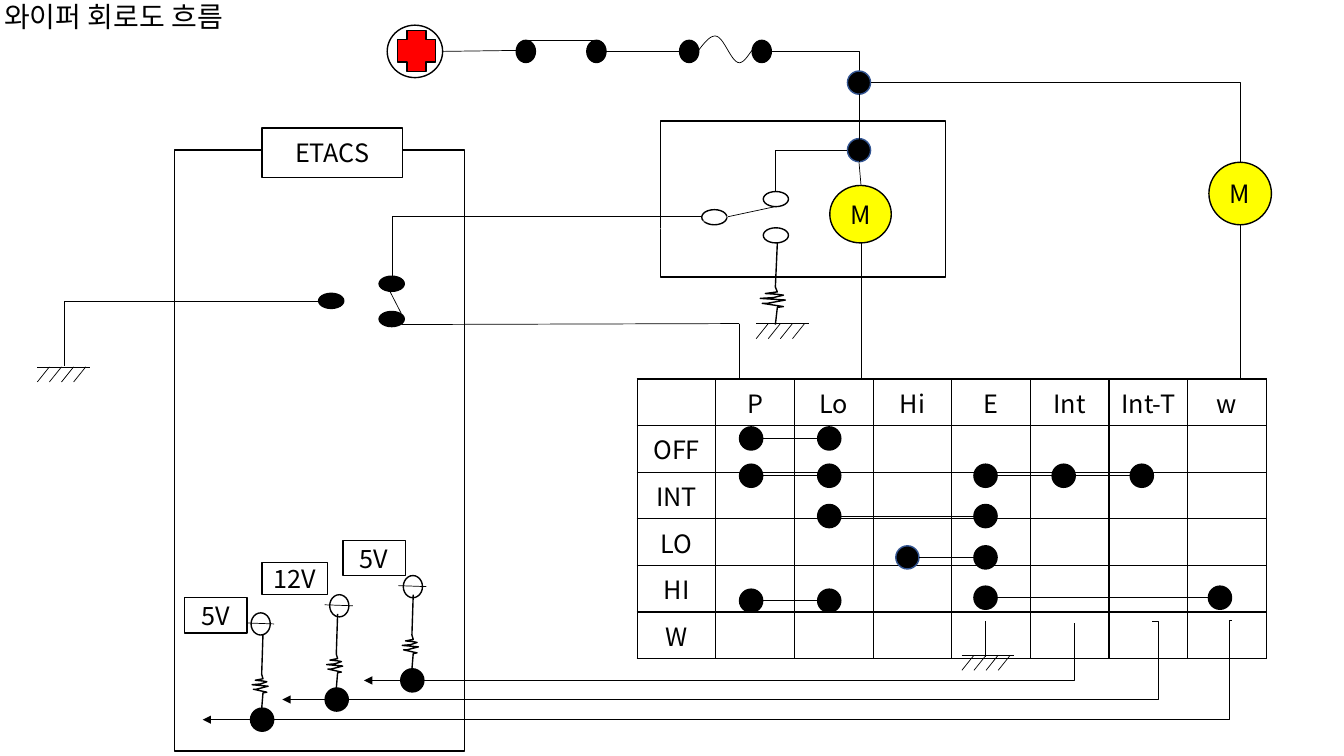
from dataclasses import dataclass
from itertools import pairwise

from lxml.etree import SubElement
from pptx import Presentation
from pptx.dml.color import RGBColor
from pptx.enum.shapes import MSO_CONNECTOR, MSO_SHAPE
from pptx.enum.text import MSO_ANCHOR, MSO_AUTO_SIZE, PP_ALIGN
from pptx.oxml.ns import qn
from pptx.util import Inches, Pt


@dataclass(frozen=True)
class Theme:
    font: str = "Noto Sans CJK KR"
    title_size: int = 20
    text_size: int = 18
    ink: str = "000000"
    paper: str = "FFFFFF"
    motor: str = "FFFF00"
    battery: str = "FF0000"
    node_edge: str = "325491"
    outline: float = 1
    wire: float = 0.5


# Zigzag resistor outline as shares of its width and height
RESISTOR = [(0.68, 0), (0.6, 0.54), (0.68, 0.6), (0.2, 0.62), (0.68, 0.63), (0.92, 0.64),
            (0.52, 0.67), (0, 0.68), (1, 0.7), (0.28, 0.74), (0.08, 0.74), (0.92, 0.78),
            (0.68, 0.79), (0.6, 1)]


class Circuit:
    """Draws on a grid of 13.33 columns by 7.5 rows, one cell being a square inch."""

    def __init__(self, deck, theme):
        deck.slide_width, deck.slide_height = Inches(13.33), Inches(7.5)
        self.theme = theme
        self.slide = deck.slides.add_slide(deck.slide_layouts[5])
        self.shapes = self.slide.shapes

    def style_text(self, frame, text, size, align):
        para = frame.paragraphs[0]
        para.text, para.alignment = text, align
        para.font.size, para.font.name = Pt(size), self.theme.font
        para.font.color.rgb = RGBColor.from_string(self.theme.ink)
        defaults = para._p.pPr.find(qn("a:defRPr"))
        SubElement(defaults, qn("a:ea")).set("typeface", self.theme.font)
        return para

    def title(self, text, left, top, width, height):
        box = self.shapes.title
        box.left, box.top, box.width, box.height = map(Inches, (left, top, width, height))
        box.text_frame.auto_size = MSO_AUTO_SIZE.NONE
        box.text_frame.vertical_anchor = MSO_ANCHOR.MIDDLE
        self.style_text(box.text_frame, text, self.theme.title_size, PP_ALIGN.LEFT).line_spacing = 0.9

    def shape(self, kind, left, top, width, height, fill=None, edge=None, text=None):
        shape = self.shapes.add_shape(kind, *map(Inches, (left, top, width, height)))
        shape.shadow.inherit = False
        shape.fill.solid()
        shape.fill.fore_color.rgb = RGBColor.from_string(fill or self.theme.paper)
        shape.line.color.rgb = RGBColor.from_string(edge or self.theme.ink)
        shape.line.width = Pt(self.theme.outline)
        if text:
            frame = shape.text_frame
            frame.margin_left = frame.margin_right = frame.margin_top = frame.margin_bottom = 0
            frame.vertical_anchor = MSO_ANCHOR.MIDDLE
            self.style_text(frame, text, self.theme.text_size, PP_ALIGN.CENTER)

    def box(self, *place, text=None):
        self.shape(MSO_SHAPE.RECTANGLE, *place, text=text)

    def oval(self, *place, **look):
        self.shape(MSO_SHAPE.OVAL, *place, **look)

    def node(self, x, y, edge=None):
        self.oval(x - 0.115, y - 0.115, 0.23, 0.23, fill=self.theme.ink, edge=edge)

    def wire(self, x1, y1, x2, y2, color=None, arrow=False, kind=MSO_CONNECTOR.STRAIGHT):
        wire = self.shapes.add_connector(kind, *map(Inches, (x1, y1, x2, y2)))
        wire.line.color.rgb = RGBColor.from_string(color or self.theme.ink)
        wire.line.width = Pt(self.theme.wire)
        properties = wire._element.spPr
        if arrow:
            SubElement(properties.find(qn("a:ln")), qn("a:tailEnd")).set("type", "triangle")
        SubElement(properties, qn("a:effectLst"))
        return wire

    def elbow(self, *ends, turn=None):
        """One corner by default; turn places the upright of a two-corner wire."""
        wire = self.wire(*ends, kind=MSO_CONNECTOR.ELBOW)
        geometry = wire._element.spPr.find(qn("a:prstGeom"))
        if turn is None:
            geometry.set("prst", "bentConnector2")
            return
        values = geometry.find(qn("a:avLst"))
        if values is None:
            values = SubElement(geometry, qn("a:avLst"))
        guide = SubElement(values, qn("a:gd"))
        guide.set("name", "adj1")
        guide.set("fmla", f"val {round(turn * 100000)}")

    def trace(self, points, weight):
        start, *rest = [(Inches(x), Inches(y)) for x, y in points]
        builder = self.shapes.build_freeform(*start)
        builder.add_line_segments(rest, close=False)
        line = builder.convert_to_shape()
        line.shadow.inherit = False
        line.fill.background()
        line.line.color.rgb = RGBColor.from_string(self.theme.ink)
        line.line.width = Pt(weight)

    def curve(self, start, *segments, steps=10):
        points = [start]
        for a, b, end in segments:
            begin = points[-1]
            for t in (step / steps for step in range(1, steps + 1)):
                u = 1 - t
                points.append(tuple(u**3 * p + 3 * u * u * t * q + 3 * u * t * t * r + t**3 * s
                                    for p, q, r, s in zip(begin, a, b, end)))
        self.trace(points, self.theme.wire)

    def resistor(self, left, top, width, height):
        self.trace([(left + x * width, top + y * height) for x, y in RESISTOR], self.theme.outline)

    def ground(self, left, top):
        self.wire(left, top, left + 0.52, top)
        for index in range(4):
            x = left + 0.12 * (index + 1)
            self.wire(x, top, x - 0.12, top + 0.15)

    def table(self, left, top, column, row, heads, sides):
        size = len(sides) + 1, len(heads) + 1
        table = self.shapes.add_table(*size, *map(Inches, (left, top, column * size[1], row * size[0]))).table
        table.first_row = table.horz_banding = False
        for line in table.rows:
            line.height = Inches(row)
        for r in range(size[0]):
            for c in range(size[1]):
                cell = table.cell(r, c)
                text = heads[c - 1] if r == 0 and c else sides[r - 1] if r and c == 0 else ""
                self.style_text(cell.text_frame, text, self.theme.text_size, PP_ALIGN.CENTER)
                properties = cell._tc.get_or_add_tcPr()
                for side in ("lnL", "lnR", "lnT", "lnB"):
                    border = SubElement(properties, qn(f"a:{side}"))
                    border.set("w", str(Pt(self.theme.outline)))
                    paint = SubElement(border, qn("a:solidFill"))
                    SubElement(paint, qn("a:srgbClr")).set("val", self.theme.ink)
                cell.fill.background()


def main():
    deck = Presentation()
    theme = Theme()
    art = Circuit(deck, theme)
    art.title("와이퍼 회로도 흐름", -0.06, 0.05, 2.78, 0.27)

    # Switch table and its contacts
    heads = ["P", "Lo", "Hi", "E", "Int", "Int-T", "w"]
    art.table(6.32, 3.76, 0.78, 0.46, heads, ["OFF", "INT", "LO", "HI", "W"])
    contact_x = {head: 7.45 + 0.775 * index for index, head in enumerate(heads)}
    contacts = [(4.35, ["P", "Lo"]), (4.72, ["P", "Lo"]), (4.72, ["E", "Int", "Int-T"]),
                (5.12, ["Lo", "E"]), (5.53, ["Hi", "E"]), (5.96, ["P", "Lo"]), (5.93, ["E", "w"])]
    for y, names in contacts:
        for name in names:
            art.node(contact_x[name], y, edge=theme.node_edge if name == "Hi" else None)
        for first, second in pairwise(names):
            art.wire(contact_x[first] + 0.115, y, contact_x[second] - 0.115, y)

    # Battery, relay contact and fuse
    art.oval(3.84, 0.25, 0.55, 0.52)
    art.shape(MSO_SHAPE.CROSS, 3.94, 0.3, 0.38, 0.41, fill=theme.battery)
    for left in (5.12, 5.82, 6.74, 7.46):
        art.oval(left, 0.4, 0.19, 0.22, fill=theme.ink)
    art.wire(4.39, 0.51, 5.13, 0.5)
    art.wire(5.21, 0.4, 5.91, 0.4)
    art.wire(6, 0.51, 6.74, 0.51)
    art.curve((6.92, 0.51), ((6.99, 0.42), (7.05, 0.34), (7.11, 0.36)),
              ((7.18, 0.38), (7.25, 0.6), (7.32, 0.62)),
              ((7.38, 0.64), (7.44, 0.51), (7.47, 0.49)), ((7.51, 0.47), (7.5, 0.5), (7.5, 0.52)))
    art.elbow(7.65, 0.51, 8.52, 0.7)

    # Wiper motor with its park switch, and washer motor
    art.box(6.55, 1.2, 2.83, 1.55)
    art.oval(8.23, 1.84, 0.61, 0.57, fill=theme.motor, text="M")
    art.oval(11.99, 1.61, 0.62, 0.62, fill=theme.motor, text="M")
    for y in (0.82, 1.49):
        art.node(8.52, y, edge=theme.node_edge)
    art.wire(8.52, 0.93, 8.52, 1.61)
    art.wire(8.52, 1.61, 8.54, 1.84)
    art.wire(8.54, 2.41, 8.54, 3.75)
    art.elbow(8.64, 0.82, 12.3, 1.61)
    art.wire(12.3, 2.23, 12.3, 3.75)
    art.elbow(8.4, 1.49, 7.69, 1.9)
    for left, top in ((7.57, 1.9), (7.57, 2.26), (6.96, 2.08)):
        art.oval(left, top, 0.25, 0.15)
    art.wire(7.22, 2.15, 6.55, 2.27, color=theme.paper)
    art.wire(7.22, 2.15, 7.69, 2.05)
    art.resistor(7.54, 2.41, 0.25, 0.81)

    # Control unit with its relay
    art.box(1.73, 1.49, 2.88, 5.96)
    art.box(2.6, 1.27, 1.39, 0.49, text="ETACS")
    for left, top in ((3.76, 2.74), (3.76, 3.09), (3.16, 2.91)):
        art.oval(left, top, 0.25, 0.15, fill=theme.ink)
    art.wire(3.8, 2.76, 3.98, 3.11)
    art.elbow(6.96, 2.15, 3.89, 2.74)
    art.wire(3.98, 3.22, 7.33, 3.21)
    art.wire(7.33, 3.21, 7.33, 3.76)
    art.elbow(3.16, 2.99, 0.64, 3.63, turn=1)

    # Grounds
    for left, top in ((0.37, 3.64), (7.5, 3.21), (9.54, 6.5)):
        art.ground(left, top)
    art.wire(9.77, 6.16, 9.77, 6.52)

    # Pull-up inputs: terminal, node, arrow tip, table end, turn, label
    inputs = [((4, 5.71), (4.09, 6.75), 3.61, (10.66, 6.18), 1, (3.4, 5.36, 0.62, 0.35), "5V"),
              ((3.27, 5.9), (3.34, 6.94), 2.8, (11.43, 6.16), 1.007, (2.6, 5.58, 0.65, 0.32), "12V"),
              ((2.49, 6.08), (2.6, 7.14), 2.01, (12.22, 6.15), 0.997, (1.83, 5.93, 0.62, 0.35), "5V")]
    for (left, top), (x, y), tip, end, turn, place, volts in inputs:
        art.oval(left, top, 0.19, 0.22)
        art.wire(left - 0.05, top + 0.1, left + 0.23, top + 0.11)
        art.resistor(x - 0.1, y - 0.85, 0.16, 0.74)
        art.node(x, y)
        art.wire(x - 0.1, y, tip, y, arrow=True)
        art.elbow(x + 0.11, y, *end, turn=turn)
        art.box(*place, text=volts)

    deck.save("out.pptx")


if __name__ == "__main__":
    main()
